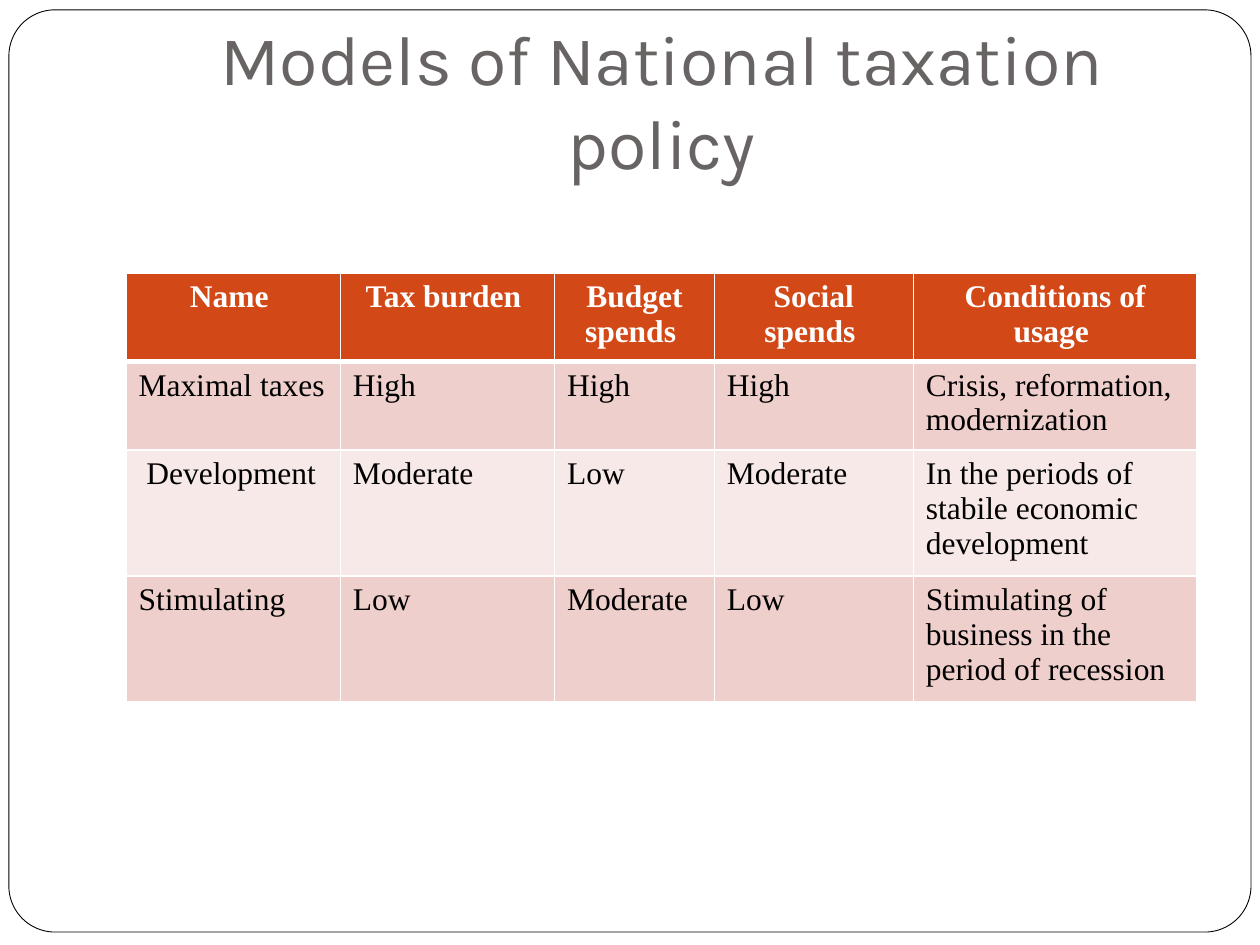
from dataclasses import dataclass

from lxml.etree import SubElement
from pptx import Presentation
from pptx.dml.color import RGBColor
from pptx.enum.shapes import MSO_SHAPE
from pptx.enum.text import MSO_ANCHOR, PP_ALIGN
from pptx.oxml.ns import qn
from pptx.util import Cm, Pt

WHITE = RGBColor(0xFF, 0xFF, 0xFF)
BLACK = RGBColor(0x00, 0x00, 0x00)
GRAY = RGBColor(0x69, 0x64, 0x64)
ORANGE = RGBColor(0xD3, 0x48, 0x17)
ROSE = RGBColor(0xEF, 0xCF, 0xCC)
PALE_ROSE = RGBColor(0xF7, 0xE9, 0xE8)

TITLE_FONT = {"name": "Karla", "size": Pt(40), "bold": False}
HEADER_FONT = {"name": "Times New Roman", "size": Pt(18), "bold": True}
BODY_FONT = {**HEADER_FONT, "bold": False}


@dataclass
class RowStyle:
    fill: RGBColor
    color: RGBColor
    font: dict
    align: PP_ALIGN
    bottom_border: int = 1


@dataclass
class PolicyRow:
    height: float
    style: RowStyle
    texts: tuple


HEADER = RowStyle(ORANGE, WHITE, HEADER_FONT, PP_ALIGN.CENTER, 3)
DARK_BAND = RowStyle(ROSE, BLACK, BODY_FONT, PP_ALIGN.LEFT)
LIGHT_BAND = RowStyle(PALE_ROSE, BLACK, BODY_FONT, PP_ALIGN.LEFT)

COLUMN_WIDTHS = (4.32, 4.32, 3.22, 4.01, 5.72)
ROWS = (
    PolicyRow(1.65, HEADER, ("Name ", "Tax burden ", "Budget spends ",
                             "Social spends ", "Conditions of usage ")),
    PolicyRow(1.65, DARK_BAND, ("Maximal taxes", "High", "High", "High",
                                "Crisis, reformation, modernization")),
    PolicyRow(2.36, LIGHT_BAND, (" Development", "Moderate", "Low", "Moderate",
                                 "In the periods of stabile economic development")),
    PolicyRow(2.36, DARK_BAND, ("Stimulating", "Low", "Moderate", "Low",
                                "Stimulating of business in the period of recession")),
)


def write_text(frame, text: str, font: dict, color: RGBColor, align: PP_ALIGN) -> None:
    para = frame.paragraphs[0]
    para.alignment = align
    span = para.add_run()
    span.text = text
    for name, value in font.items():
        setattr(span.font, name, value)
    span.font.color.rgb = color


def set_borders(cell, widths: dict) -> None:
    properties = cell._tc.get_or_add_tcPr()
    for index, (side, width) in enumerate(widths.items()):
        line = SubElement(properties, qn(f"a:{side}"), w=str(Pt(width)))
        fill = SubElement(line, qn("a:solidFill"))
        SubElement(fill, qn("a:srgbClr"), val=str(WHITE))
        properties.insert(index, line)


def draw_frame(page) -> None:
    box = page.shapes.add_shape(
        MSO_SHAPE.ROUNDED_RECTANGLE, Cm(0.18), Cm(0.2), Cm(25.04), Cm(18.59))
    box.adjustments[0] = 0.05
    box.shadow.inherit = False
    box.fill.solid()
    box.fill.fore_color.rgb = WHITE
    box.line.color.rgb = BLACK
    box.line.width = Pt(0.5)


def draw_title(page, text: str) -> None:
    box = page.shapes.add_textbox(Cm(2.54), Cm(0.76), Cm(21.59), Cm(3.18))
    frame = box.text_frame
    layout = {"word_wrap": True, "vertical_anchor": MSO_ANCHOR.BOTTOM,
              "margin_bottom": Cm(0.25)}
    for name, value in layout.items():
        setattr(frame, name, value)
    write_text(frame, text, TITLE_FONT, GRAY, PP_ALIGN.CENTER)


def draw_table(page, rows: tuple) -> None:
    height = sum(row.height for row in rows)
    table = page.shapes.add_table(
        len(rows), len(COLUMN_WIDTHS), Cm(2.54), Cm(5.51),
        Cm(sum(COLUMN_WIDTHS)), Cm(height)).table
    for column, width in zip(table.columns, COLUMN_WIDTHS):
        column.width = Cm(width)
    top_border = 1
    for table_row, row in zip(table.rows, rows):
        table_row.height = Cm(row.height)
        style = row.style
        for cell, text in zip(table_row.cells, row.texts):
            cell.fill.solid()
            cell.fill.fore_color.rgb = style.fill
            write_text(cell.text_frame, text, style.font, style.color, style.align)
            set_borders(cell, {"lnL": 1, "lnR": 1, "lnT": top_border,
                               "lnB": style.bottom_border})
        top_border = style.bottom_border


def main() -> None:
    deck = Presentation()
    deck.slide_width, deck.slide_height = Cm(25.4), Cm(19.05)
    page = deck.slides.add_slide(deck.slide_layouts[6])
    draw_frame(page)
    draw_title(page, "Models of National taxation policy")
    draw_table(page, ROWS)
    deck.save("out.pptx")


if __name__ == "__main__":
    main()
